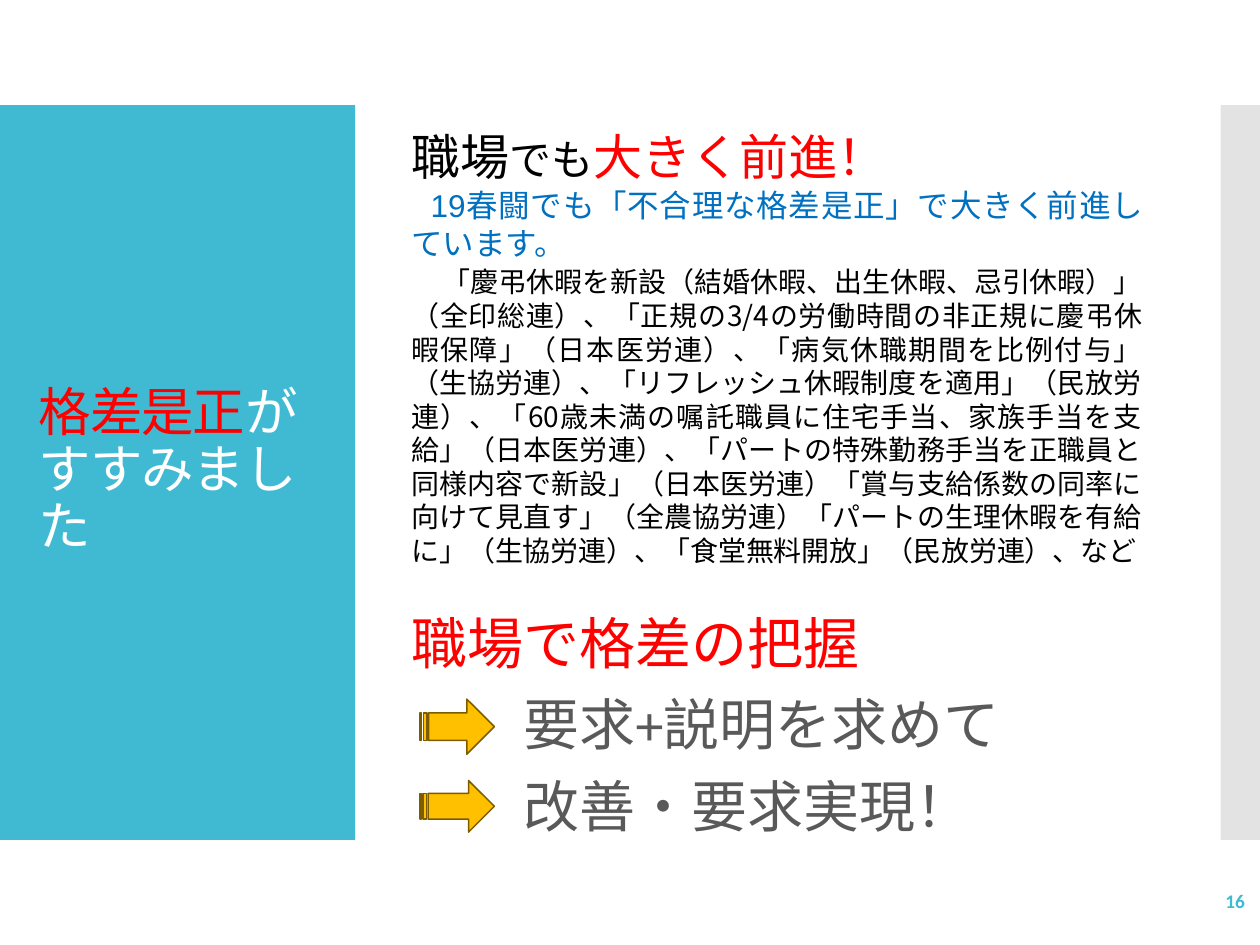
from lxml import etree
from pptx import Presentation
from pptx.dml.color import RGBColor
from pptx.enum import shapes, text
from pptx.oxml.ns import qn
from pptx.util import Pt

HEX = {"teal": "40BAD2", "grey": "C8C8C8", "red": "FF0000", "white": "FFFFFF",
       "black": "000000", "blue": "0070C0", "dark": "595959",
       "gold": "FFC000", "brown": "7D5C00"}
CJK = "Noto Sans CJK JP"

# Content: paragraphs hold runs of (words, size, font, colour)
TITLE = [{"runs": [("格差是正", 30, "Calibri", "red"),
                   ("がすすみました", 30, "Calibri", "white")], "line": 0.9}]
CASES = (
    "「慶弔休暇を新設（結婚休暇、出生休暇、忌引休暇）」（全印総連）、"
    "「正規の3/4の労働時間の非正規に慶弔休暇保障」（日本医労連）、"
    "「病気休職期間を比例付与」（生協労連）、"
    "「リフレッシュ休暇制度を適用」（民放労連）、"
    "「60歳未満の嘱託職員に住宅手当、家族手当を支給」（日本医労連）、"
    "「パートの特殊勤務手当を正職員と同様内容で新設」（日本医労連）"
    "「賞与支給係数の同率に向けて見直す」（全農協労連）"
    "「パートの生理休暇を有給に」（生協労連）、"
    "「食堂無料開放」（民放労連）、など")
NEWS = [
    {"runs": [("職場", 28, "Arial", "black"), ("でも", 24, "Arial", "black"),
              ("大きく前進！", 28, "Arial", "red")], "align": "JUSTIFY"},
    {"runs": [("19春闘でも「不合理な格差是正」で大きく前進しています。",
               18, "Arial", "blue")], "align": "JUSTIFY", "indent": 11},
    {"runs": [(CASES, 16, CJK, "black")], "align": "JUSTIFY",
     "indent": 18, "before": 2},
]
GOALS = [{"runs": [(words, 32, "Calibri", tint)], "line": 0.9,
          "before": 12, "indent": indent}
         for words, tint, indent in [("職場で格差の把握", "red", 0),
                                     ("要求+説明を求めて", "dark", 64),
                                     ("改善・要求実現！", "dark", 64)]]
PAGE = [{"runs": [("16", 11, "Calibri", "teal")], "align": "RIGHT", "bold": True}]

# Layout: left, top, width, height
BANDS = [("teal", 0, 203), ("grey", 697.5, 22.5)]
BAND_TOP, BAND_H = 60, 420
TEXTS = [(TITLE, (15, 88.5, 174, 362), "MIDDLE"),
         (NEWS, (228, 69, 432, 281), "TOP"),
         (GOALS, (228, 350.5, 432, 130.5), "MIDDLE"),
         (PAGE, (628, 500.5, 90.5, 29), "MIDDLE")]
ARROWS = [(240, 399.5, 42.5, 31.5), (240, 446, 42.5, 29.5)]

prs = Presentation()
prs.slide_width, prs.slide_height = Pt(720), Pt(540)
slide = prs.slides.add_slide(prs.slide_layouts[6])


def rgb(name):
    return RGBColor.from_string(HEX[name])


def add_shape(kind, box, fill, line=None):
    shape = slide.shapes.add_shape(kind, *map(Pt, box))
    shape.shadow.inherit = False
    shape.fill.solid()
    shape.fill.fore_color.rgb = rgb(fill)
    if line:
        shape.line.color.rgb = rgb(line)
        shape.line.width = Pt(0.85)
    else:
        shape.line.fill.background()
    return shape


def add_text(paras, box, anchor):
    frame = slide.shapes.add_textbox(*map(Pt, box)).text_frame
    frame.word_wrap = True
    frame.vertical_anchor = getattr(text.MSO_ANCHOR, anchor)
    for i, item in enumerate(paras):
        para = frame.add_paragraph() if i else frame.paragraphs[0]
        para.alignment = getattr(text.PP_ALIGN, item.get("align", "LEFT"))
        para.line_spacing = item.get("line", 1.0)
        para.space_before = Pt(item.get("before", 0))
        props = para._p.get_or_add_pPr()
        props.set("marL", "0")
        props.set("indent", str(Pt(item.get("indent", 0))))
        for words, size, face, tint in item["runs"]:
            run = para.add_run()
            run.text = words
            run.font.size = Pt(size)
            run.font.name = face
            run.font.bold = item.get("bold", False)
            run.font.color.rgb = rgb(tint)
            look = run._r.get_or_add_rPr()
            etree.SubElement(look, qn("a:ea")).set("typeface", CJK)
            if paras is TITLE:
                look.set("spc", "-60")


# Side bands, the grey one half transparent
for fill, left, width in BANDS:
    band = add_shape(shapes.MSO_SHAPE.RECTANGLE,
                     (left, BAND_TOP, width, BAND_H), fill)
    if fill == "grey":
        color = band._element.spPr.find(qn("a:solidFill"))[0]
        etree.SubElement(color, qn("a:alpha")).set("val", "50000")

# Title, news, goals and page number
for paras, box, anchor in TEXTS:
    add_text(paras, box, anchor)

# Arrows in front of the two goals
for box in ARROWS:
    add_shape(shapes.MSO_SHAPE.STRIPED_RIGHT_ARROW, box, "gold", "brown")

prs.save("out.pptx")
